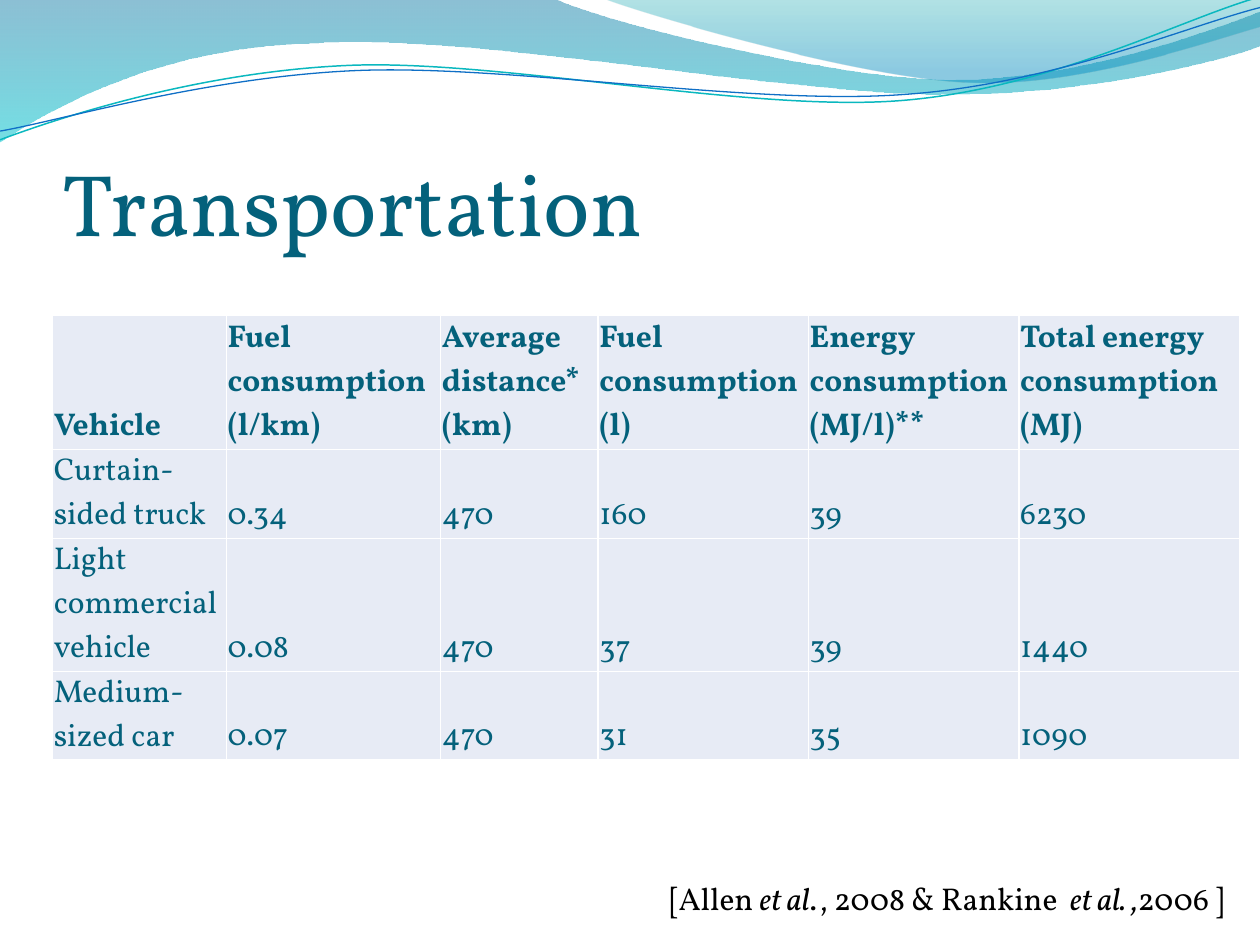
import dataclasses

import lxml.etree
import pptx
import pptx.dml.color
import pptx.enum.text
import pptx.oxml
import pptx.oxml.ns
import pptx.util

Pt = pptx.util.Pt
qn = pptx.oxml.ns.qn


@dataclasses.dataclass(frozen=True)
class Theme:
    """Colours, font and type sizes of the slide."""
    font: str = "Vollkorn"
    title_size: int = 50
    body_size: int = 18
    heading: str = "04617B"
    body: str = "000000"
    cell: str = "E7EBF5"
    border: str = "FFFFFF"
    band: tuple = (("0074A1", 0, 45), ("00C6CF", 1, 55))
    crest: tuple = (("00A1A9", 0, 30), ("008BBF", 0.8, 45))
    teal_line: str = "0AB8BF"
    blue_line: str = "0F6FC6"


BAND = [
    [(0, 0)], [(316.8, -0.7)],
    [(342.7, 12.2), (478.1, 45.4), (545.8, 45.4)],
    [(614.2, 45.4), (689.8, 18.7), (720, 6.5)], [(720.7, 25.9)],
    [(707.8, 31.7), (626.4, 54.7), (537.1, 54)],
    [(447.8, 54), (275, 20.2), (185, 24.5)],
    [(92.9, 25.9), (33.1, 59.8), (-0.7, 81.4)], [(0, 0)],
]
CREST = [
    [(344.9, -0.7)],
    [(366.5, 7.9), (491, 44.6), (553.7, 46.8)],
    [(616.3, 49.7), (691.9, 23), (720, 15.1)], [(720, 0)], [(344.9, -0.7)],
]
TEAL_WAVE = [
    [(0, 79.9)],
    [(34.6, 67), (113.8, 41), (199.4, 37.4)],
    [(284.4, 33.8), (427, 64.1), (513.4, 57.6)],
    [(599.8, 51.1), (675.4, 10.8), (718.6, -1.4)],
]
BLUE_WAVE = [
    [(0, 74.9)],
    [(33.8, 69.1), (118.1, 43.9), (203.8, 40.3)],
    [(290.2, 36.7), (429.8, 60.5), (516.2, 54)],
    [(601.9, 48.2), (677.5, 15.1), (720, 4.3)],
]
COLUMN_WIDTHS = [99.4, 122.4, 90, 120.2, 120.2, 126]
ROW_HEIGHTS = [76.8, 50.9, 76, 50.4]
ROWS = [
    ["Vehicle", "Fuel consumption (l/km)", "Average distance* (km)",
     "Fuel consumption (l)", "Energy consumption (MJ/l)**", "Total energy consumption (MJ)"],
    ["Curtain-sided truck", "0.34", "470", "160", "39", "6230"],
    ["Light commercial vehicle", "0.08", "470", "37", "39", "1440"],
    ["Medium-sized car", "0.07", "470", "31", "35", "1090"],
]
CITATION = [("[Allen ", False), ("et al", True), ("., 2008 & Rankine  ", False),
            ("et al. ,", True), ("2006 ]", False)]


def rgb(value):
    """Return a colour object for a hex value."""
    return pptx.dml.color.RGBColor.from_string(value)


class SlideBuilder:
    """Draws styled elements on the current slide."""

    def __init__(self, slide, theme):
        self.slide = slide
        self.theme = theme

    def style(self, paragraph, size, color, bold=False):
        """Set the font of a whole paragraph."""
        font = paragraph.font
        font.name, font.size, font.bold = self.theme.font, Pt(size), bold
        font.color.rgb = rgb(color)

    def outline(self, segments, closed):
        """Add a freeform whose three-point segments are cubic curves."""
        points = [(Pt(x), Pt(y)) for segment in segments for x, y in segment]
        builder = self.slide.shapes.build_freeform(*points[0])
        builder.add_line_segments(points[1:], close=closed)
        shape = builder.convert_to_shape()
        shape.shadow.inherit = False
        lines = iter(list(shape.element.spPr.iter(qn("a:lnTo"))))
        for segment in segments[1:]:
            first, *others = [next(lines) for _ in segment]
            if others:
                first.tag = qn("a:cubicBezTo")
            for other in others:
                first.append(other[0])
                other.getparent().remove(other)
        return shape

    def wave(self, segments, stops):
        """Add a closed shape with a translucent vertical gradient."""
        shape = self.outline(segments, True)
        shape.line.fill.background()
        shape.fill.gradient()
        shape.fill.gradient_angle = 270
        for stop, (color, position, _) in zip(shape.fill.gradient_stops, stops):
            stop.color.rgb = rgb(color)
            stop.position = position
        for node, (_, _, opacity) in zip(shape.element.spPr.iter(qn("a:srgbClr")), stops):
            lxml.etree.SubElement(node, qn("a:alpha"), val=str(opacity * 1000))

    def curve(self, segments, color, width):
        """Add an open curved line."""
        shape = self.outline(segments, False)
        shape.fill.background()
        shape.line.color.rgb = rgb(color)
        shape.line.width = Pt(width)

    def text(self, spans, left, top, width, height, size, color):
        """Add a text box of plain and italic spans and return its frame."""
        box = self.slide.shapes.add_textbox(Pt(left), Pt(top), Pt(width), Pt(height))
        paragraph = box.text_frame.paragraphs[0]
        self.style(paragraph, size, color)
        for content, italic in spans:
            span = paragraph.add_run()
            span.text = content
            if italic:
                span.font.italic = True
        return box.text_frame

    def title(self, content, left, top, width, height):
        """Add the slide title."""
        frame = self.text([(content, False)], left, top, width, height,
                          self.theme.title_size, self.theme.heading)
        frame.word_wrap = True
        frame.vertical_anchor = pptx.enum.text.MSO_ANCHOR.BOTTOM
        frame.margin_left = frame.margin_right = frame.margin_bottom = 0

    def citation(self, spans, left, top, width, height):
        """Add the source line."""
        frame = self.text(spans, left, top, width, height, self.theme.body_size, self.theme.body)
        frame.word_wrap = False
        frame.auto_size = pptx.enum.text.MSO_AUTO_SIZE.SHAPE_TO_FIT_TEXT

    def cell(self, cell, content, bold):
        """Fill one table cell with text, colour and borders."""
        cell.text = content
        self.style(cell.text_frame.paragraphs[0], self.theme.body_size, self.theme.heading, bold)
        cell.vertical_anchor = pptx.enum.text.MSO_ANCHOR.BOTTOM
        cell.margin_left = cell.margin_right = cell.margin_top = Pt(0.75)
        cell.margin_bottom = 0
        properties = cell._tc.get_or_add_tcPr()
        for side in ("a:lnL", "a:lnR", "a:lnT", "a:lnB"):
            line = lxml.etree.SubElement(properties, qn(side), w=str(Pt(1)))
            fill = lxml.etree.SubElement(line, qn("a:solidFill"))
            lxml.etree.SubElement(fill, qn("a:srgbClr"), val=self.theme.border)
        cell.fill.solid()
        cell.fill.fore_color.rgb = rgb(self.theme.cell)

    def table(self, rows, left, top, widths, heights):
        """Add a table with a bold first row."""
        table = self.slide.shapes.add_table(len(rows), len(widths), Pt(left), Pt(top),
                                            Pt(sum(widths)), Pt(sum(heights))).table
        table.horz_banding = False
        for column, width in zip(table.columns, widths):
            column.width = Pt(width)
        for index, (row, height) in enumerate(zip(table.rows, heights)):
            row.height = Pt(height)
            for cell, content in zip(row.cells, rows[index]):
                self.cell(cell, content, index == 0)


def main():
    """Build and save the deck."""
    deck = pptx.Presentation()
    deck.slide_width, deck.slide_height = Pt(720), Pt(540)
    theme = Theme()
    page = SlideBuilder(deck.slides.add_slide(deck.slide_layouts[6]), theme)
    page.wave(BAND, theme.band)
    page.wave(CREST, theme.crest)
    page.curve(TEAL_WAVE, theme.teal_line, 0.85)
    page.curve(BLUE_WAVE, theme.blue_line, 0.75)
    page.title("Transportation", 36, 55.4, 648, 90)
    page.table(ROWS, 30, 180, COLUMN_WIDTHS, ROW_HEIGHTS)
    page.citation(CITATION, 375.8, 499, 343.4, 28.8)
    deck.save("out.pptx")


if __name__ == "__main__":
    main()
